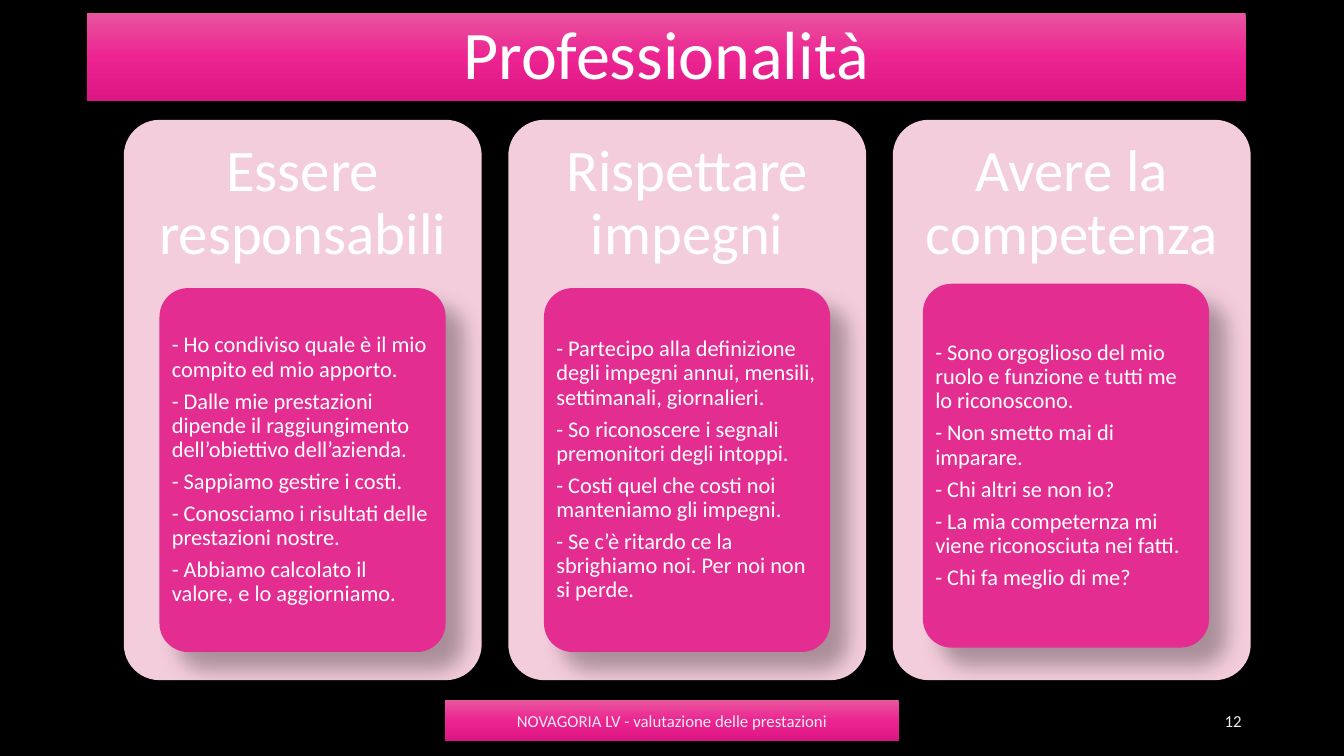
"""Build the "Professionalità" slide with three themed cards."""
from dataclasses import dataclass

from lxml.etree import SubElement
from pptx import Presentation
from pptx.dml.color import RGBColor
from pptx.enum.shapes import MSO_SHAPE
from pptx.enum.text import MSO_ANCHOR, MSO_AUTO_SIZE, PP_ALIGN
from pptx.oxml.ns import qn
from pptx.util import Cm, Pt

BLACK = RGBColor(0x00, 0x00, 0x00)
WHITE = RGBColor(0xFF, 0xFF, 0xFF)
SOFT_WHITE = RGBColor(0xED, 0xED, 0xED)
PALE_PINK = RGBColor(0xF4, 0xCD, 0xDC)
PINK = RGBColor(0xE3, 0x2D, 0x91)
BANNER_STOPS = (
    (0, RGBColor(0xE8, 0x55, 0x9D)),
    (50, RGBColor(0xEC, 0x24, 0x92)),
    (100, RGBColor(0xDC, 0x16, 0x83)),
)

FONT = "Calibri"
CARD_LEFT, CARD_TOP, CARD_PITCH = 3.12, 3.02, 9.69
CARD_WIDTH, CARD_HEIGHT, HEADING_HEIGHT = 9.02, 14.12, 4.24
PANEL_WIDTH, PANEL_HEIGHT, PANEL_INSET = 7.21, 9.17, 0.21
BAND_TOP, BAND_HEIGHT = 17.65, 1.02


@dataclass(frozen=True)
class Box:
    """Position and size in centimetres."""
    left: float
    top: float
    width: float
    height: float

    def inset(self, gap: float) -> "Box":
        """Return the box shrunk by a gap on every side."""
        return Box(self.left + gap, self.top + gap,
                   self.width - 2 * gap, self.height - 2 * gap)

    def lengths(self) -> tuple:
        """Return the four values as lengths."""
        return Cm(self.left), Cm(self.top), Cm(self.width), Cm(self.height)


@dataclass(frozen=True)
class Style:
    """Text format of one kind of box."""
    size: float
    color: RGBColor = WHITE
    align: PP_ALIGN = PP_ALIGN.CENTER
    line_spacing: float = 0.9
    space_after: float = 0
    margin_x: float = 0.25
    margin_y: float = 0.13


@dataclass(frozen=True)
class Card:
    """Heading, list and panel offset of one card."""
    heading: str
    items: tuple
    panel_dx: float = 0.9
    panel_dy: float = 4.24


TITLE = Style(48.6)
HEADING = Style(42, space_after=14.7, margin_x=0.43, margin_y=0.43)
LIST = Style(16, align=PP_ALIGN.LEFT, space_after=5.6, margin_x=0.1, margin_y=0.08)
FOOTER = Style(12, SOFT_WHITE, line_spacing=1)
NUMBER = Style(12, SOFT_WHITE, PP_ALIGN.RIGHT, line_spacing=1)

CARDS = (
    Card("Essere responsabili", (
        "- Ho condiviso quale è il mio compito ed mio apporto.",
        "- Dalle mie prestazioni dipende il raggiungimento dell’obiettivo dell’azienda.",
        "- Sappiamo gestire i costi.",
        "- Conosciamo i risultati delle prestazioni nostre.",
        "- Abbiamo calcolato il valore, e lo aggiorniamo.",
    )),
    Card("Rispettare impegni", (
        "- Partecipo alla definizione degli impegni annui, mensili, settimanali, giornalieri.",
        "- So riconoscere i segnali premonitori degli intoppi.",
        "- Costi quel che costi noi manteniamo gli impegni.",
        "- Se c’è ritardo ce la sbrighiamo noi. Per noi non si perde.",
    )),
    Card("Avere la competenza", (
        "- Sono orgoglioso del mio ruolo e funzione e tutti me lo riconoscono.",
        "- Non smetto mai di imparare.",
        "- Chi altri se non io?",
        "- La mia competernza mi viene riconosciuta nei fatti.",
        "- Chi fa meglio di me?",
    ), 0.76, 4.13),
)


def set_all(target: object, values: dict) -> None:
    """Set every named attribute on the target."""
    for name, value in values.items():
        setattr(target, name, value)


def place(sp, box: Box) -> None:
    """Move and size a shape."""
    set_all(sp, dict(zip(("left", "top", "width", "height"), box.lengths())))


def write(sp, lines: tuple, style: Style) -> None:
    """Write formatted paragraphs into a shape."""
    tf = sp.text_frame
    set_all(tf, {
        "word_wrap": True, "auto_size": MSO_AUTO_SIZE.NONE,
        "vertical_anchor": MSO_ANCHOR.MIDDLE,
        "margin_left": Cm(style.margin_x), "margin_right": Cm(style.margin_x),
        "margin_top": Cm(style.margin_y), "margin_bottom": Cm(style.margin_y),
    })
    for i, line in enumerate(lines):
        p = tf.paragraphs[0] if i == 0 else tf.add_paragraph()
        set_all(p, {
            "alignment": style.align, "line_spacing": style.line_spacing,
            "space_before": Pt(0), "space_after": Pt(style.space_after),
        })
        pPr = p._p.get_or_add_pPr()
        pPr.set("marL", "0")
        pPr.set("indent", "0")
        SubElement(pPr, qn("a:buNone"))
        r = p.add_run()
        r.text = line
        set_all(r.font, {"name": FONT, "size": Pt(style.size), "bold": False})
        r.font.color.rgb = style.color


def fill_banner(sp) -> None:
    """Fill a shape with the vertical pink gradient."""
    sp.fill.gradient()
    sp.fill.gradient_angle = 270
    stops = sp.element.spPr.find(".//" + qn("a:gsLst"))
    stops.clear()
    for position, color in BANNER_STOPS:
        stop = SubElement(stops, qn("a:gs"), pos=str(position * 1000))
        SubElement(stop, qn("a:srgbClr"), val=str(color))


def add_block(s, kind: MSO_SHAPE, box: Box):
    """Add an outline-free shape with a soft diagonal shadow."""
    sp = s.shapes.add_shape(kind, *box.lengths())
    sp.line.fill.background()
    sp.shadow.inherit = False
    effects = sp.element.spPr.find(qn("a:effectLst"))
    shadow = SubElement(effects, qn("a:outerShdw"), blurRad=str(Pt(15)),
                        dist=str(Pt(18)), dir="2700000", algn="tl", rotWithShape="0")
    color = SubElement(shadow, qn("a:srgbClr"), val=str(BLACK))
    SubElement(color, qn("a:alpha"), val="30000")
    return sp


def add_rounded(s, box: Box, color: RGBColor) -> None:
    """Add a solid rounded rectangle."""
    sp = add_block(s, MSO_SHAPE.ROUNDED_RECTANGLE, box)
    sp.adjustments[0] = 0.1
    sp.fill.solid()
    sp.fill.fore_color.rgb = color


def add_text(s, box: Box, text: str, style: Style) -> None:
    """Add a one-paragraph text box."""
    write(s.shapes.add_textbox(*box.lengths()), (text,), style)


def add_card(s, card: Card, left: float, body) -> None:
    """Draw a card and put its list into the body placeholder."""
    add_rounded(s, Box(left, CARD_TOP, CARD_WIDTH, CARD_HEIGHT), PALE_PINK)
    add_text(s, Box(left, CARD_TOP, CARD_WIDTH, HEADING_HEIGHT), card.heading, HEADING)
    panel = Box(left + card.panel_dx, CARD_TOP + card.panel_dy, PANEL_WIDTH, PANEL_HEIGHT)
    add_rounded(s, panel, PINK)
    place(body, panel.inset(PANEL_INSET))
    write(body, card.items, LIST)
    s.shapes._spTree.append(body.element)


def main() -> None:
    """Build and save the slide."""
    prs = Presentation()
    set_all(prs, {"slide_width": Cm(33.87), "slide_height": Cm(19.05)})
    s = prs.slides.add_slide(prs.slide_layouts.get_by_name("Comparison"))
    s.background.fill.solid()
    s.background.fill.fore_color.rgb = BLACK

    title, *bodies = s.placeholders
    place(title, Box(2.18, 0.33, 29.21, 2.21))
    fill_banner(title)
    write(title, ("Professionalità",), TITLE)

    for i, (card, body) in enumerate(zip(CARDS, bodies)):
        add_card(s, card, CARD_LEFT + i * CARD_PITCH, body)
    for spare in bodies[len(CARDS):]:
        s.shapes._spTree.remove(spare.element)

    footer = add_block(s, MSO_SHAPE.RECTANGLE, Box(11.22, BAND_TOP, 11.43, BAND_HEIGHT))
    fill_banner(footer)
    write(footer, ("NOVAGORIA LV - valutazione delle prestazioni",), FOOTER)
    add_text(s, Box(23.92, BAND_TOP, 7.62, BAND_HEIGHT), "12", NUMBER)
    prs.save("out.pptx")


if __name__ == "__main__":
    main()
